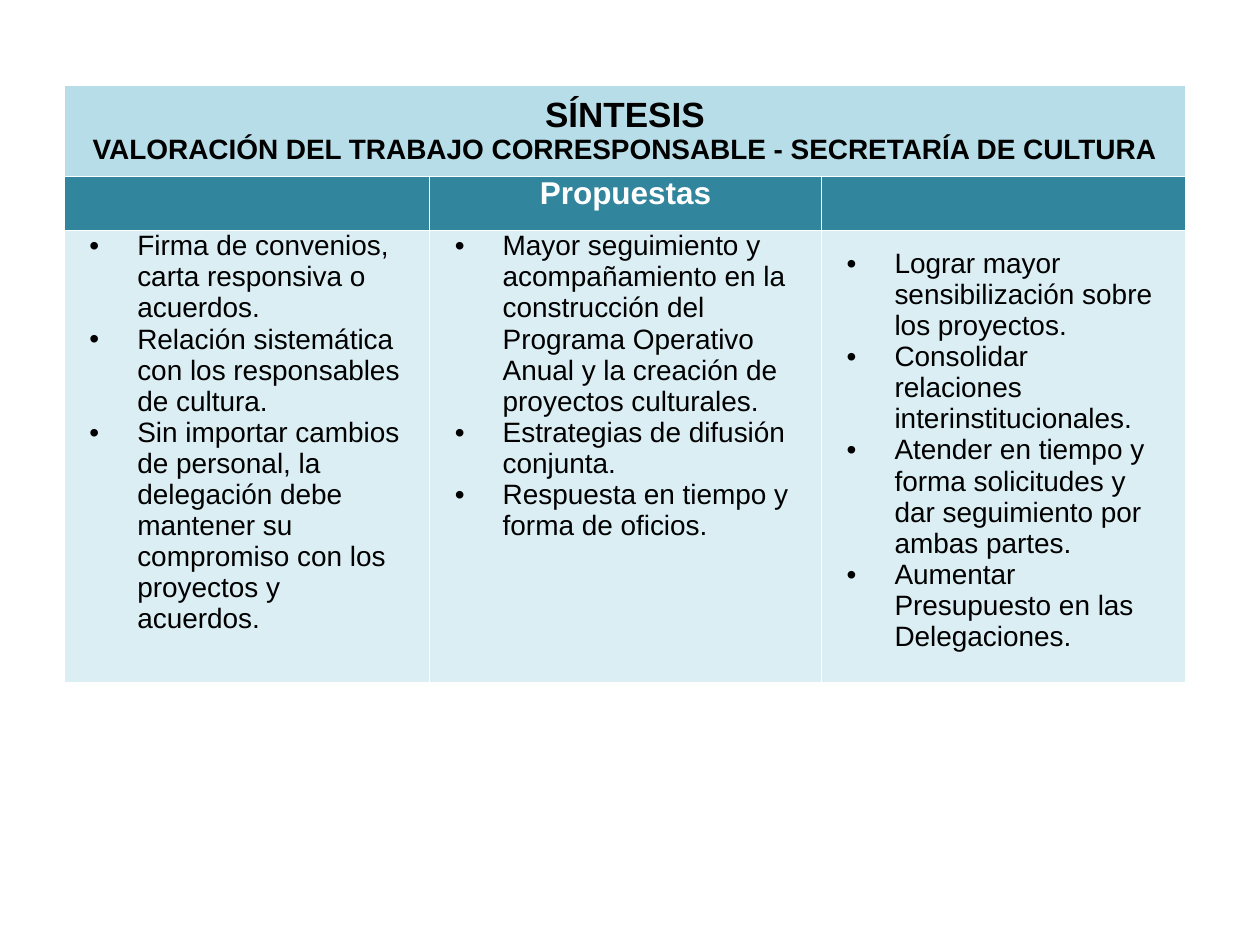
"""Build the one-slide summary table of proposals for shared cultural work."""
import dataclasses

import pptx
import pptx.dml.color
import pptx.enum.text
import pptx.oxml
import pptx.oxml.ns
import pptx.util

Inches = pptx.util.Inches
Align = pptx.enum.text.PP_ALIGN


@dataclasses.dataclass(frozen=True)
class Theme:
    """Colours, typeface and type sizes of the slide."""

    font: str = "Arial"
    ink: str = "000000"
    white: str = "FFFFFF"
    title_fill: str = "B7DEE8"
    band_fill: str = "31859C"
    body_fill: str = "DBEEF4"
    title_size: int = 20
    band_size: int = 18
    body_size: int = 16


THEME = Theme()
COLUMN_WIDTHS = (2.9, 3.11, 2.89)
ROW_HEIGHTS = (0.72, 0.43, 3.59)
BULLET_INDENT = 0.38
PROPOSALS = (
    (
        "Firma de convenios, carta responsiva o acuerdos.",
        "Relación sistemática con los responsables de cultura.",
        "Sin importar cambios de personal, la delegación debe mantener su "
        "compromiso con los proyectos y acuerdos.",
    ),
    (
        "Mayor seguimiento y acompañamiento en la construcción del Programa "
        "Operativo Anual y la creación de proyectos culturales.",
        "Estrategias de difusión conjunta.",
        "Respuesta en tiempo y forma de oficios.",
    ),
    (
        "Lograr mayor sensibilización sobre los proyectos.",
        "Consolidar relaciones interinstitucionales.",
        "Atender en tiempo y forma solicitudes y dar seguimiento por ambas partes.",
        "Aumentar Presupuesto en las Delegaciones.",
    ),
)


def set_attributes(target, values):
    """Set each named format value on the target."""
    for name, value in values.items():
        setattr(target, name, value)


def add_borders(cell):
    """Draw a thin white line on every side of a cell."""
    properties = cell._tc.get_or_add_tcPr()
    for side in ("lnL", "lnR", "lnT", "lnB"):
        properties.append(pptx.oxml.parse_xml(
            f'<a:{side} {pptx.oxml.ns.nsdecls("a")} w="12700"><a:solidFill>'
            f'<a:srgbClr val="{THEME.white}"/></a:solidFill></a:{side}>'
        ))


def style_cell(cell, fill, side_margin=0.05, top_margin=0.0):
    """Give a cell its borders, fill and margins."""
    add_borders(cell)
    cell.fill.solid()
    cell.fill.fore_color.rgb = pptx.dml.color.RGBColor.from_string(fill)
    set_attributes(cell, {
        "margin_left": Inches(side_margin),
        "margin_right": Inches(side_margin),
        "margin_top": Inches(top_margin),
        "margin_bottom": Inches(0),
        "vertical_anchor": pptx.enum.text.MSO_ANCHOR.TOP,
    })


def add_bullet(paragraph):
    """Give a paragraph a round bullet with a hanging indent."""
    properties = paragraph._p.get_or_add_pPr()
    indent = Inches(BULLET_INDENT)
    properties.set("marL", str(indent))
    properties.set("indent", str(-indent))
    properties.append(pptx.oxml.parse_xml(
        f'<a:buFont {pptx.oxml.ns.nsdecls("a")} typeface="{THEME.font}"/>'
    ))
    properties.append(pptx.oxml.parse_xml(
        f'<a:buChar {pptx.oxml.ns.nsdecls("a")} char="•"/>'
    ))


def write_lines(cell, lines, color=THEME.ink, bold=True, bulleted=False):
    """Write (text, size) lines into a cell, one paragraph each."""
    frame = cell.text_frame
    for index, (text, size) in enumerate(lines):
        paragraph = frame.add_paragraph() if index else frame.paragraphs[0]
        paragraph.alignment = Align.LEFT if bulleted else Align.CENTER
        if bulleted:
            add_bullet(paragraph)
        span = paragraph.add_run()
        span.text = text
        set_attributes(span.font, {
            "name": THEME.font, "size": pptx.util.Pt(size), "bold": bold,
        })
        span.font.color.rgb = pptx.dml.color.RGBColor.from_string(color)


def add_grid(page):
    """Add the unstyled table with its column widths and row heights."""
    table = page.shapes.add_table(
        len(ROW_HEIGHTS), len(COLUMN_WIDTHS), Inches(0.51), Inches(0.68),
        Inches(sum(COLUMN_WIDTHS)), Inches(sum(ROW_HEIGHTS)),
    ).table
    set_attributes(table, {"first_row": False, "horz_banding": False})
    for column, width in zip(table.columns, COLUMN_WIDTHS):
        column.width = Inches(width)
    for row, height in zip(table.rows, ROW_HEIGHTS):
        row.height = Inches(height)
    return table


def fill_headings(table):
    """Fill the merged title row and the band below it."""
    for column in range(len(COLUMN_WIDTHS)):
        style_cell(table.cell(0, column), THEME.title_fill, top_margin=0.08)
        style_cell(table.cell(1, column), THEME.band_fill)
    title = table.cell(0, 0)
    title.merge(table.cell(0, len(COLUMN_WIDTHS) - 1))
    write_lines(title, (
        ("SÍNTESIS", THEME.title_size),
        ("VALORACIÓN DEL TRABAJO CORRESPONSABLE - SECRETARÍA DE CULTURA",
         THEME.body_size),
    ))
    write_lines(table.cell(1, 1), [("Propuestas", THEME.band_size)], THEME.white)


def fill_proposals(table):
    """Fill the body row with one bulleted list per column."""
    for column, (items, top) in enumerate(zip(PROPOSALS, (0, 0, 0.14))):
        cell = table.cell(2, column)
        style_cell(cell, THEME.body_fill, side_margin=0.2, top_margin=top)
        lines = [(item, THEME.body_size) for item in items]
        write_lines(cell, lines, bold=False, bulleted=True)


def main():
    """Build and save the deck."""
    deck = pptx.Presentation()
    set_attributes(deck, {"slide_width": Inches(10), "slide_height": Inches(7.5)})
    page = deck.slides.add_slide(deck.slide_layouts.get_by_name("Blank"))
    table = add_grid(page)
    fill_headings(table)
    fill_proposals(table)
    deck.save("out.pptx")


if __name__ == "__main__":
    main()
